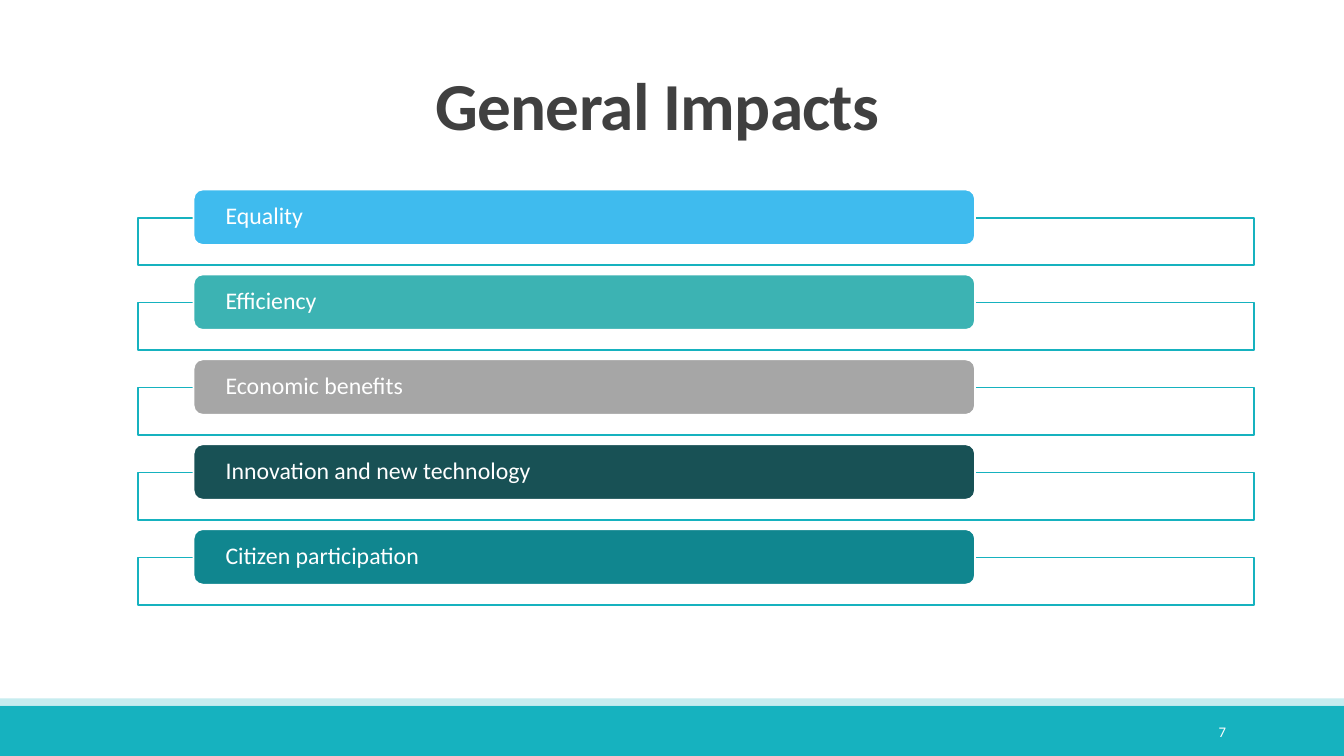
from dataclasses import dataclass

from pptx import Presentation
from pptx.dml.color import RGBColor
from pptx.enum.shapes import MSO_SHAPE
from pptx.enum.text import MSO_ANCHOR, MSO_AUTO_SIZE, PP_ALIGN
from pptx.util import Inches, Pt

RECTANGLE = MSO_SHAPE.RECTANGLE
ROUNDED = MSO_SHAPE.ROUNDED_RECTANGLE
LEFT, CENTER, RIGHT = PP_ALIGN.LEFT, PP_ALIGN.CENTER, PP_ALIGN.RIGHT

TITLE = "General Impacts"
PAGE_NUMBER = "7"
IMPACTS = [
    ("Equality", "3FBBEE"),
    ("Efficiency", "3CB3B3"),
    ("Economic benefits", "A6A6A6"),
    ("Innovation and new technology", "185155"),
    ("Citizen participation", "10868F"),
]


@dataclass(frozen=True)
class Theme:
    font: str = "Calibri"
    white: str = "FFFFFF"
    teal: str = "16B2BF"
    pale_teal: str = "C6ECEF"
    dark: str = "404040"
    title_size: float = 48
    label_size: float = 17
    number_size: float = 10.5
    line_width: float = 1.25


THEME = Theme()

PAGE_WIDTH, PAGE_HEIGHT = 13.33, 7.5
FOOTER_TOP, STRIPE_HEIGHT = 7, 0.07
FIRST_LABEL_TOP, LAST_LABEL_TOP = 1.88, 5.25
FRAME_DROP = 0.28


def write(box, text, *, size, color=THEME.white, align=LEFT, bold=False,
          line_spacing=1.0, inset=0.1, letter_spacing=None):
    frame = box.text_frame
    frame.word_wrap = True
    frame.auto_size = MSO_AUTO_SIZE.NONE
    frame.vertical_anchor = MSO_ANCHOR.MIDDLE
    frame.margin_left = frame.margin_right = Inches(inset)
    frame.margin_top = frame.margin_bottom = 0
    para = frame.paragraphs[0]
    para.alignment = align
    para.line_spacing = line_spacing
    span = para.add_run()
    span.text = text
    font = span.font
    font.name, font.size, font.bold = THEME.font, Pt(size), bold
    font.color.rgb = RGBColor.from_string(color)
    if letter_spacing is not None:
        font._element.set("spc", str(int(letter_spacing * 100)))


def add_box(page, kind, left, top, width, height, fill, line=None):
    box = page.shapes.add_shape(
        kind, Inches(left), Inches(top), Inches(width), Inches(height))
    box.shadow.inherit = False
    box.fill.solid()
    box.fill.fore_color.rgb = RGBColor.from_string(fill)
    if line:
        box.line.color.rgb = RGBColor.from_string(line)
        box.line.width = Pt(THEME.line_width)
    else:
        box.line.fill.background()
    return box


def add_footer(page):
    add_box(page, RECTANGLE, 0, FOOTER_TOP, PAGE_WIDTH,
            PAGE_HEIGHT - FOOTER_TOP, THEME.teal)
    add_box(page, RECTANGLE, 0, FOOTER_TOP - STRIPE_HEIGHT, PAGE_WIDTH,
            STRIPE_HEIGHT, THEME.pale_teal)
    number = page.shapes.add_textbox(
        Inches(10.83), Inches(7.06), Inches(1.43), Inches(0.4))
    write(number, PAGE_NUMBER, size=THEME.number_size, align=RIGHT)


def add_title(page):
    title = page.shapes.title
    title.left, title.top = Inches(1.02), Inches(0.44)
    title.width, title.height = Inches(11), Inches(1.3)
    write(title, TITLE, size=THEME.title_size, color=THEME.dark, align=CENTER,
          bold=True, line_spacing=0.85, letter_spacing=-0.5)


def add_impacts(page):
    pitch = (LAST_LABEL_TOP - FIRST_LABEL_TOP) / (len(IMPACTS) - 1)
    for index, (name, color) in enumerate(IMPACTS):
        top = FIRST_LABEL_TOP + index * pitch
        add_box(page, RECTANGLE, 1.37, top + FRAME_DROP, 11.07, 0.47,
                THEME.white, THEME.teal)
        label = add_box(page, ROUNDED, 1.92, top, 7.75, 0.55,
                        color, THEME.white)
        write(label, name, size=THEME.label_size, line_spacing=0.9, inset=0.29)


def main():
    deck = Presentation()
    deck.slide_width, deck.slide_height = Inches(PAGE_WIDTH), Inches(PAGE_HEIGHT)
    page = deck.slides.add_slide(deck.slide_layouts.get_by_name("Title Only"))
    add_footer(page)
    add_title(page)
    add_impacts(page)
    deck.save("out.pptx")


if __name__ == "__main__":
    main()
